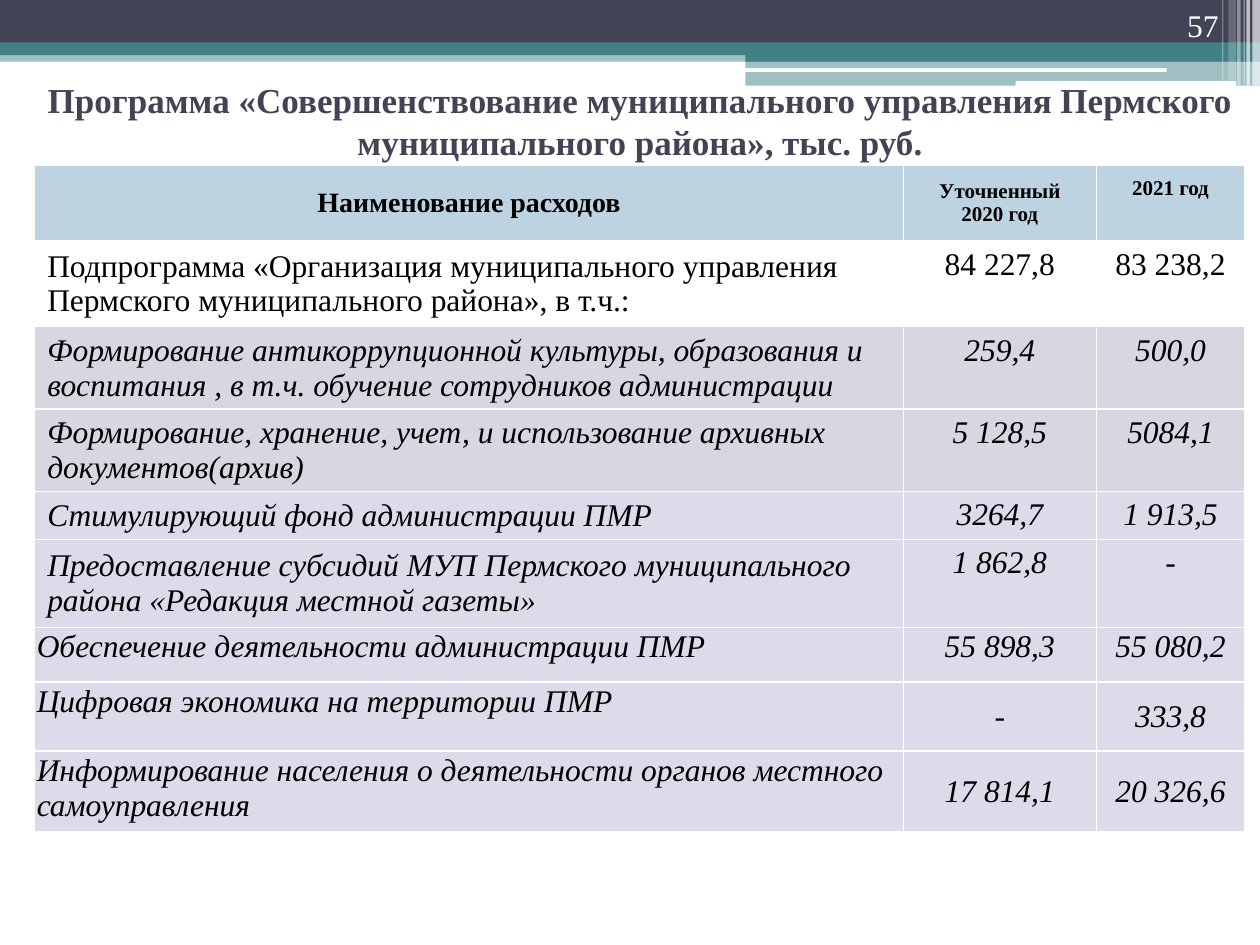
import pptx
import pptx.util
import pptx.dml.color
import pptx.enum.shapes
import pptx.enum.text
import pptx.oxml.ns
import lxml.etree

Pt = pptx.util.Pt
RGBColor = pptx.dml.color.RGBColor
SHAPES = pptx.enum.shapes.MSO_SHAPE
ALIGN = pptx.enum.text.PP_ALIGN
ANCHOR = pptx.enum.text.MSO_ANCHOR

FONT = "Times New Roman"
COLORS = {
    "dark": "424456",
    "teal": "438086",
    "white": "FFFFFF",
    "black": "000000",
    "header": "BED3E1",
    "gray": "D6D7E0",
    "lilac": "DBDBE9",
}


def write_text(frame, text, size=18, color="black", bold=False, italic=False,
               align=ALIGN.LEFT, anchor=ANCHOR.MIDDLE):
    frame.word_wrap = True
    frame.vertical_anchor = anchor
    paragraph = frame.paragraphs[0]
    paragraph.alignment = align
    run = paragraph.add_run()
    run.text = text
    run.font.name = FONT
    run.font.size = Pt(size)
    run.font.bold = bold
    run.font.italic = italic
    run.font.color.rgb = RGBColor.from_string(COLORS[color])


def add_bar(left, top, width, height, color, opacity=100, kind=SHAPES.RECTANGLE):
    bar = slide.shapes.add_shape(kind, Pt(left), Pt(top), Pt(width), Pt(height))
    bar.shadow.inherit = False
    bar.line.fill.background()
    bar.fill.solid()
    bar.fill.fore_color.rgb = RGBColor.from_string(COLORS[color])
    if opacity < 100:
        qn = pptx.oxml.ns.qn
        fill_color = bar.element.spPr.find(qn("a:solidFill")).find(qn("a:srgbClr"))
        lxml.etree.SubElement(fill_color, qn("a:alpha"), val=str(opacity * 1000))


presentation = pptx.Presentation()
presentation.slide_width = Pt(720)
presentation.slide_height = Pt(540)
slide = presentation.slides.add_slide(presentation.slide_layouts[5])

# Header bands
add_bar(0, 28.8, 720, 6.5, "teal", 50)
add_bar(0, 0, 720, 24.5, "dark")
add_bar(0, 24.3, 720, 7.2, "teal")
add_bar(426, 28.2, 294, 7, "teal")
add_bar(426, 34.7, 294, 14.2, "teal", 50)
add_bar(425.5, 38.9, 241.2, 2.2, "white", kind=SHAPES.ROUNDED_RECTANGLE)
add_bar(580.3, 46.2, 126, 2.8, "white", kind=SHAPES.ROUNDED_RECTANGLE)

# Vertical light stripes: left, width, height, opacity
for left, width, height, opacity in [
    (715.7, 4.3, 49, 65),
    (712.2, 2, 49, 65),
    (710.6, 0.7, 49, 60),
    (707, 2, 49, 40),
    (702, 4.3, 46, 20),
    (698.4, 0.7, 46, 30),
]:
    add_bar(left, 0, width, height, "white", opacity)

# Title, in front of the bands
title = slide.shapes.title
title.element.getparent().append(title.element)
title.left, title.top, title.width, title.height = Pt(11.5), Pt(37.7), Pt(708.5), Pt(62)
title.text_frame.auto_size = pptx.enum.text.MSO_AUTO_SIZE.NONE
write_text(title.text_frame,
           "Программа «Совершенствование муниципального управления Пермского "
           "муниципального района», тыс. руб.",
           size=20, color="dark", bold=True, align=ALIGN.CENTER)

# Expenses table: height, fill, inset, name anchor, value anchor, texts
MIDDLE, TOP = ANCHOR.MIDDLE, ANCHOR.TOP
WIDE, NARROW = (7.2, 3.6), (1.2, 1.2)
rows = [
    (43.2, "header", WIDE, MIDDLE, MIDDLE,
     ("Наименование расходов", "Уточненный 2020 год", "2021 год")),
    (49, "white", WIDE, MIDDLE, TOP,
     ("Подпрограмма «Организация муниципального управления Пермского "
      "муниципального района», в т.ч.:", "84 227,8", "83 238,2")),
    (46.6, "gray", WIDE, MIDDLE, TOP,
     ("Формирование антикоррупционной культуры, образования и воспитания , "
      "в т.ч. обучение сотрудников администрации", "259,4", "500,0")),
    (46.8, "gray", WIDE, MIDDLE, TOP,
     ("Формирование, хранение, учет, и использование архивных "
      "документов(архив)", "5 128,5", "5084,1")),
    (27.4, "lilac", WIDE, MIDDLE, TOP,
     ("Стимулирующий фонд администрации ПМР", "3264,7", "1 913,5")),
    (50.4, "lilac", WIDE, MIDDLE, TOP,
     ("Предоставление субсидий МУП Пермского муниципального района "
      "«Редакция местной газеты»", "1 862,8", "-")),
    (31, "lilac", NARROW, TOP, TOP,
     ("Обеспечение деятельности администрации ПМР", "55 898,3", "55 080,2")),
    (39.6, "lilac", NARROW, TOP, MIDDLE,
     ("Цифровая экономика на территории ПМР", "-", "333,8")),
    (46, "lilac", NARROW, TOP, MIDDLE,
     ("Информирование населения о деятельности органов местного "
      "самоуправления", "17 814,1", "20 326,6")),
]
column_widths = [496.4, 110.3, 84.8]

table = slide.shapes.add_table(
    len(rows), len(column_widths), Pt(19.8), Pt(94.5),
    Pt(sum(column_widths)), Pt(sum(row[0] for row in rows))).table
table.horz_banding = False
for column, width in zip(table.columns, column_widths):
    column.width = Pt(width)

for row_index, (height, fill, inset, name_anchor, value_anchor, texts) in enumerate(rows):
    table.rows[row_index].height = Pt(height)
    is_header = row_index == 0
    for column_index, text in enumerate(texts):
        is_name = column_index == 0
        cell = table.cell(row_index, column_index)
        cell.fill.solid()
        cell.fill.fore_color.rgb = RGBColor.from_string(COLORS[fill])
        cell.margin_left = cell.margin_right = Pt(inset[0])
        cell.margin_top = cell.margin_bottom = Pt(inset[1])
        cell.vertical_anchor = name_anchor if is_name else value_anchor
        size = (16 if is_name else 12) if is_header else 18
        write_text(cell.text_frame, text, size=size, bold=is_header,
                   italic=row_index > 1, anchor=None,
                   align=ALIGN.LEFT if is_name and not is_header else ALIGN.CENTER)

# The last heading sits above the middle of its cell
table.cell(0, 2).margin_bottom = Pt(20.6)

# Page number
page_number = slide.shapes.add_textbox(Pt(643.7), Pt(0), Pt(59.8), Pt(28.8))
write_text(page_number.text_frame, "57", color="white",
           align=ALIGN.RIGHT, anchor=ANCHOR.BOTTOM)

presentation.save("out.pptx")
